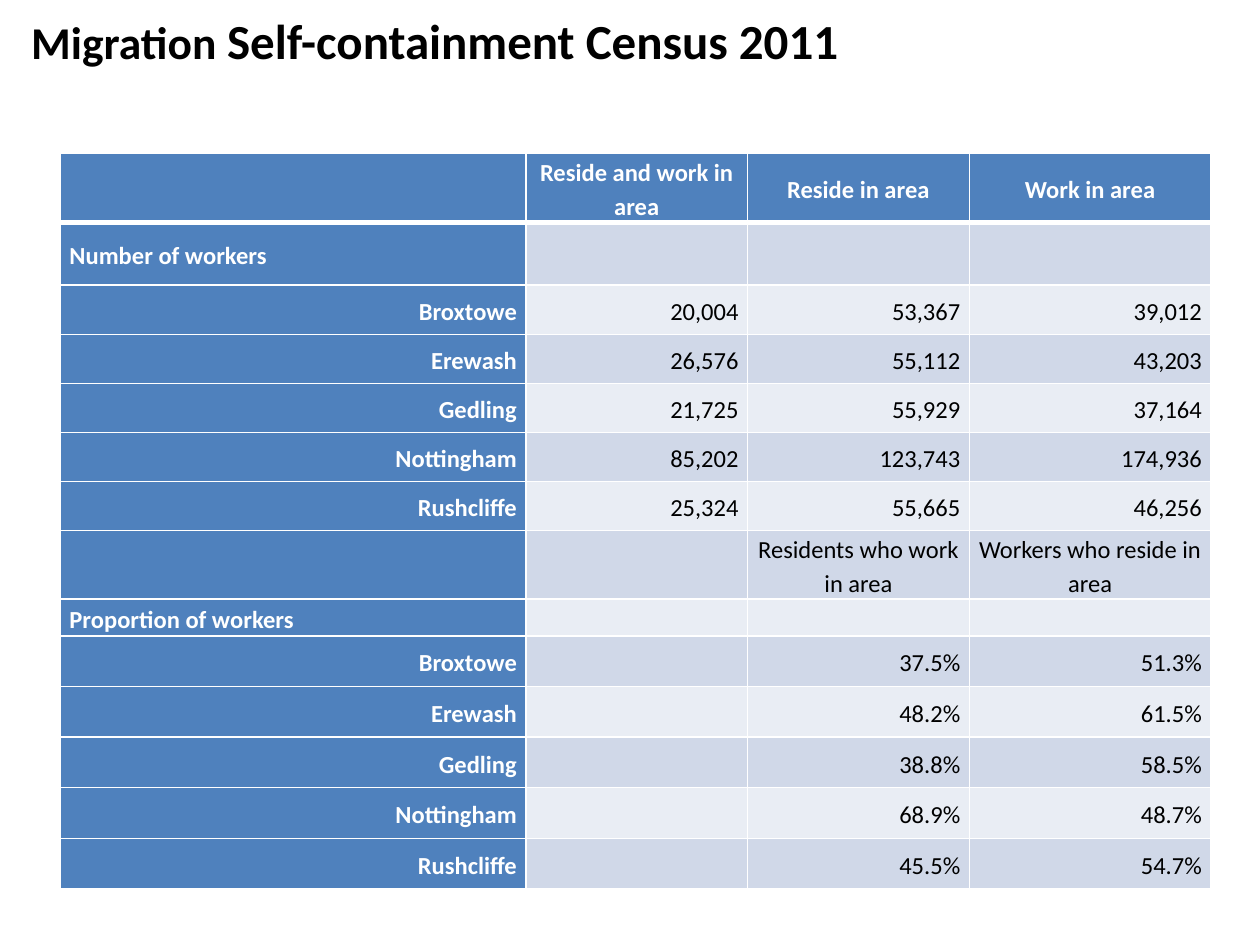
from dataclasses import dataclass

from lxml import etree
from pptx import Presentation
from pptx.dml.color import RGBColor
from pptx.enum.text import MSO_ANCHOR, PP_ALIGN
from pptx.oxml.ns import qn
from pptx.util import Cm, Pt

LEFT, CENTER, RIGHT = PP_ALIGN.LEFT, PP_ALIGN.CENTER, PP_ALIGN.RIGHT
MIDDLE = MSO_ANCHOR.MIDDLE
FONT = "Calibri"
WHITE, BLACK, BLUE = "FFFFFF", "000000", "4F81BD"
BANDS = ("E9EDF4", "D0D8E8")
COL_WIDTHS = (9.38, 4.47, 4.47, 4.87)
CELL_SIZE = 14


@dataclass
class Row:
    height: float
    texts: tuple[str, str, str, str]
    label_align: PP_ALIGN = RIGHT
    value_align: PP_ALIGN = RIGHT


ROWS = [
    Row(1.39, ("", "Reside and work in area", "Reside in area", "Work in area"), LEFT, CENTER),
    Row(1.27, ("Number of workers", "", "", ""), LEFT),
    Row(0.99, ("Broxtowe", "20,004", "53,367", "39,012")),
    Row(0.99, ("Erewash", "26,576", "55,112", "43,203")),
    Row(0.99, ("Gedling", "21,725", "55,929", "37,164")),
    Row(0.99, ("Nottingham", "85,202", "123,743", "174,936")),
    Row(0.99, ("Rushcliffe", "25,324", "55,665", "46,256")),
    Row(1.38, ("", "", "Residents who work in area", "Workers who reside in area"), LEFT, CENTER),
    Row(0.74, ("Proportion of workers", "", "", ""), LEFT),
    Row(1.02, ("Broxtowe", "", "37.5%", "51.3%")),
    Row(1.02, ("Erewash", "", "48.2%", "61.5%")),
    Row(1.02, ("Gedling", "", "38.8%", "58.5%")),
    Row(1.02, ("Nottingham", "", "68.9%", "48.7%")),
    Row(1.02, ("Rushcliffe", "", "45.5%", "54.7%")),
]


def rgb(value: str) -> RGBColor:
    return RGBColor.from_string(value)


def style_run(r, size: float, color: str, bold: bool) -> None:
    r.font.name, r.font.size, r.font.bold = FONT, Pt(size), bold
    r.font.color.rgb = rgb(color)


def add_borders(cell, widths: dict[str, float]) -> None:
    tc_pr = cell._tc.get_or_add_tcPr()
    for side, width in widths.items():
        ln = etree.SubElement(tc_pr, qn(f"a:ln{side}"), w=str(Pt(width)))
        fill = etree.SubElement(ln, qn("a:solidFill"))
        etree.SubElement(fill, qn("a:srgbClr"), val=WHITE)


def fill_cell(cell, text: str, align: PP_ALIGN, fill: str, emphasis: bool) -> None:
    cell.fill.solid()
    cell.fill.fore_color.rgb = rgb(fill)
    cell.vertical_anchor = MIDDLE
    cell.margin_left = cell.margin_right = Cm(0.18)
    cell.margin_top = cell.margin_bottom = 0
    p = cell.text_frame.paragraphs[0]
    p.text = text
    p.alignment, p.line_spacing = align, 1.15
    for r in p.runs:
        style_run(r, CELL_SIZE, WHITE if emphasis else BLACK, emphasis)
    etree.SubElement(p._p, qn("a:endParaRPr"), sz=str(CELL_SIZE * 100))


def add_title(s) -> None:
    tf = s.shapes.add_textbox(Cm(0.38), 0, Cm(22.02), Cm(1.6)).text_frame
    tf.word_wrap, tf.vertical_anchor = True, MIDDLE
    p = tf.paragraphs[0]
    for text, size in (("Migration ", 26), ("Self-containment Census 2011", 28)):
        r = p.add_run()
        r.text = text
        style_run(r, size, BLACK, True)


def add_worker_table(s, rows: list[Row]) -> None:
    table = s.shapes.add_table(
        len(rows), len(COL_WIDTHS), Cm(1.22), Cm(3.09),
        Cm(sum(COL_WIDTHS)), Cm(sum(row.height for row in rows)),
    ).table
    for column, width in zip(table.columns, COL_WIDTHS):
        column.width = Cm(width)
    for i, row in enumerate(rows):
        table.rows[i].height = Cm(row.height)
        for j, text in enumerate(row.texts):
            cell = table.cell(i, j)
            heading = i == 0 or j == 0
            add_borders(cell, {"L": 1, "R": 1, "T": 3 if i == 1 else 1, "B": 3 if i == 0 else 1})
            align = row.label_align if j == 0 else row.value_align
            fill_cell(cell, text, align, BLUE if heading else BANDS[i % 2], heading)


def main() -> None:
    """Build the slide on migration self-containment."""
    prs = Presentation()
    prs.slide_width, prs.slide_height = Cm(25.4), Cm(19.05)
    s = prs.slides.add_slide(prs.slide_layouts[6])
    add_title(s)
    add_worker_table(s, ROWS)
    prs.save("out.pptx")


if __name__ == "__main__":
    main()
